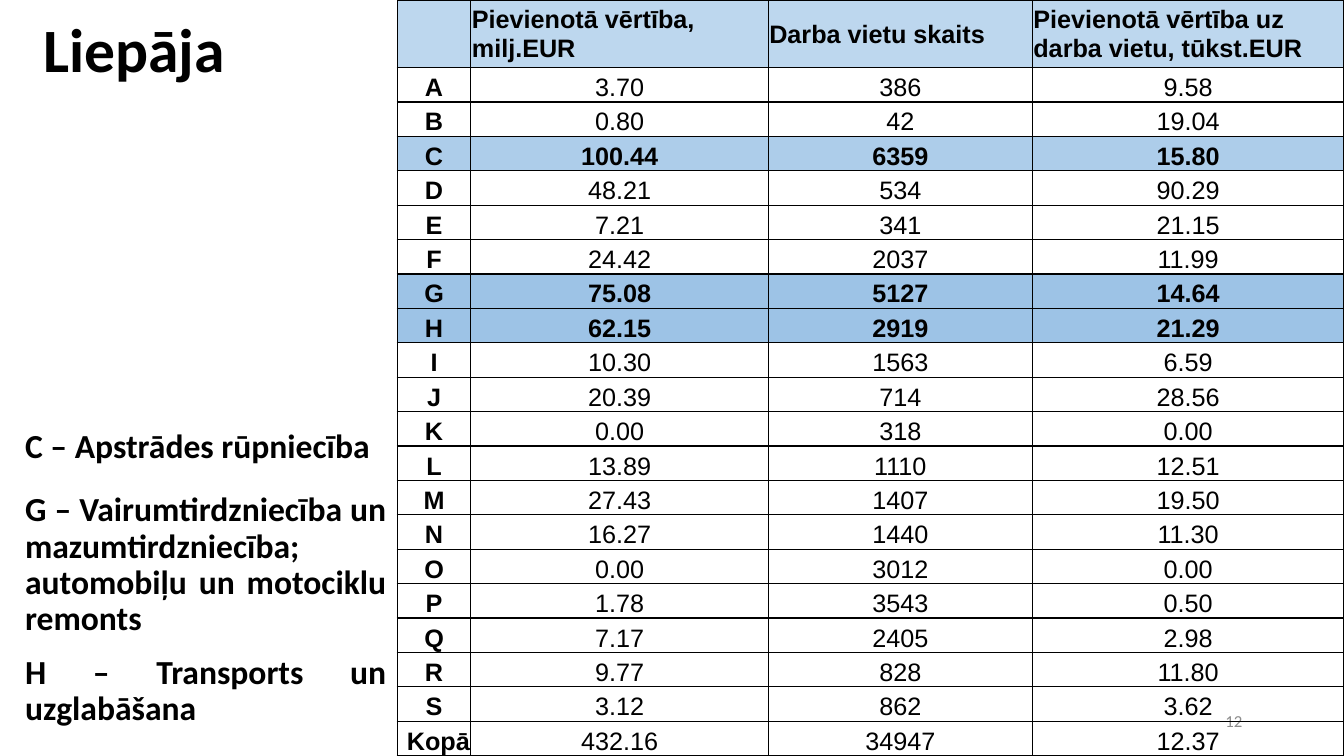
"""Builds the slide on value added and jobs by sector in Liepāja."""
from lxml.etree import SubElement
from pptx import Presentation
from pptx.dml.color import RGBColor as RGB
from pptx.enum.text import MSO_ANCHOR as ANCHOR, PP_ALIGN as ALIGN
from pptx.oxml.ns import qn
from pptx.util import Inches, Pt

COLORS = {"text": "000000", "number": "8C8C8C", "header": "BDD7EE", "accent": "9DC3E6"}

prs = Presentation()
prs.slide_width, prs.slide_height = Inches(13.33), Inches(7.5)
s = prs.slides.add_slide(prs.slide_layouts[6])
col, row = prs.slide_width / 100, prs.slide_height / 100


def add_run(p, text, size, font, bold, color="text"):
    r = p.add_run()
    r.text = text
    r.font.size, r.font.name, r.font.bold = Pt(size), font, bold
    r.font.color.rgb = RGB.from_string(COLORS[color])


def add_text(x, y, w, h, text, size, align, bold=True, color="text", anchor=ANCHOR.TOP, spacing=0.9):
    sp = s.shapes.add_textbox(int(x * col), int(y * row), int(w * col), int(h * row))
    tf = sp.text_frame
    tf.word_wrap, tf.vertical_anchor = True, anchor
    p = tf.paragraphs[0]
    p.alignment, p.line_spacing = align, spacing
    add_run(p, text, size, "Calibri", bold, color)


add_text(70.67, 92.67, 22.5, 5.33, "12", 12, ALIGN.RIGHT, False, "number", ANCHOR.MIDDLE, 1.0)

header = ["", "Pievienotā vērtība, milj.EUR", "Darba vietu skaits",
          "Pievienotā vērtība uz darba vietu, tūkst.EUR"]
sectors = [
    ("A", "3.70", "386", "9.58"),
    ("B", "0.80", "42", "19.04"),
    ("C", "100.44", "6359", "15.80"),
    ("D", "48.21", "534", "90.29"),
    ("E", "7.21", "341", "21.15"),
    ("F", "24.42", "2037", "11.99"),
    ("G", "75.08", "5127", "14.64"),
    ("H", "62.15", "2919", "21.29"),
    ("I", "10.30", "1563", "6.59"),
    ("J", "20.39", "714", "28.56"),
    ("K", "0.00", "318", "0.00"),
    ("L", "13.89", "1110", "12.51"),
    ("M", "27.43", "1407", "19.50"),
    ("N", "16.27", "1440", "11.30"),
    ("O", "0.00", "3012", "0.00"),
    ("P", "1.78", "3543", "0.50"),
    ("Q", "7.17", "2405", "2.98"),
    ("R", "9.77", "828", "11.80"),
    ("S", "3.12", "862", "3.62"),
    ("Kopā", "432.16", "34947", "12.37"),
]
rows = [header, *sectors]
widths = [5.48, 22.13, 19.65, 23.18]
header_height = 8.93
row_height = (100 - header_height) / len(sectors)

table = s.shapes.add_table(len(rows), len(widths), int(29.56 * col), 0,
                           int(sum(widths) * col), int(100 * row)).table
for j, width in enumerate(widths):
    table.columns[j].width = int(width * col)

for i, values in enumerate(rows):
    is_header = i == 0
    is_key = values[0] in ("C", "G", "H")
    table.rows[i].height = int((header_height if is_header else row_height) * row)
    for j, value in enumerate(values):
        cell = table.cell(i, j)
        cell.margin_left = cell.margin_right = cell.margin_top = Inches(0.01)
        cell.margin_bottom = 0
        cell.vertical_anchor = ANCHOR.MIDDLE if is_header else ANCHOR.BOTTOM
        tc_pr = cell._tc.get_or_add_tcPr()
        for side in ("a:lnL", "a:lnR", "a:lnT", "a:lnB"):
            ln = SubElement(tc_pr, qn(side), w=str(Pt(1)))
            SubElement(SubElement(ln, qn("a:solidFill")), qn("a:srgbClr"), val=COLORS["text"])
        if is_header or is_key:
            cell.fill.solid()
            cell.fill.fore_color.rgb = RGB.from_string(COLORS["header" if is_header else "accent"])
        else:
            cell.fill.background()
        if values[0] == "C":
            SubElement(tc_pr.find(qn("a:solidFill"))[0], qn("a:alpha"), val="83000")
        if value:
            p = cell.text_frame.paragraphs[0]
            p.alignment = ALIGN.LEFT if is_header else ALIGN.RIGHT if value == "Kopā" else ALIGN.CENTER
            add_run(p, value, 18, "Arial", is_header or is_key or j == 0)

legend = [
    (56.13, 7.73, "C – Apstrādes rūpniecība"),
    (64.53, 21.47, "G – Vairumtirdzniecība un mazumtirdzniecība; automobiļu un motociklu remonts"),
    (86, 13.33, "H – Transports un uzglabāšana"),
]
for y, height, text in legend:
    add_text(1.13, y, 28.36, height, text, 24, ALIGN.JUSTIFY)

add_text(2.48, 1.87, 16.65, 11.33, "Liepāja", 44, ALIGN.LEFT)

prs.save("out.pptx")
